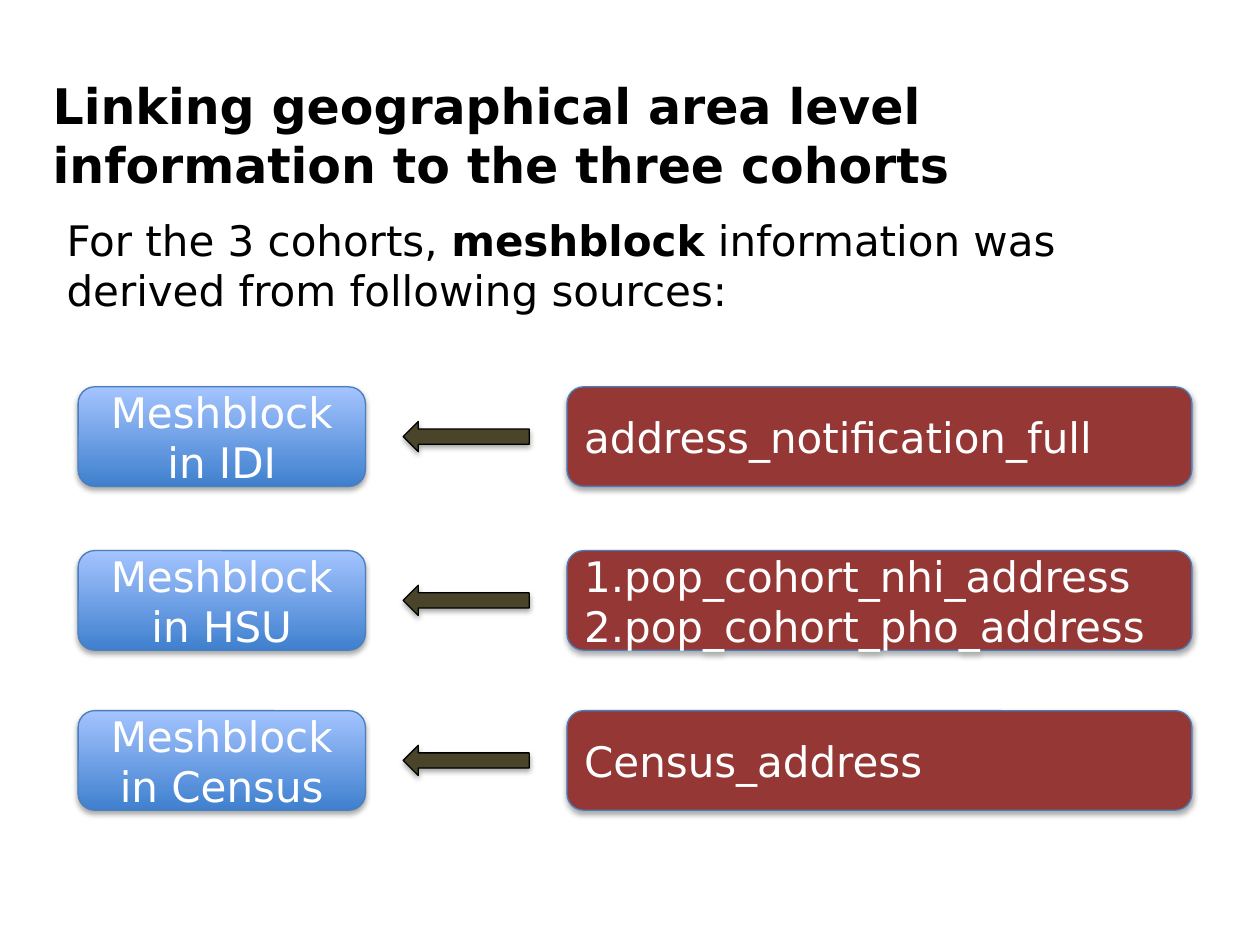
from dataclasses import dataclass

from lxml.etree import SubElement
from pptx import Presentation
from pptx.dml.color import RGBColor
from pptx.enum.shapes import MSO_SHAPE as Shape
from pptx.enum.text import MSO_ANCHOR as Anchor, PP_ALIGN as Align
from pptx.oxml.ns import qn
from pptx.util import Inches, Pt


@dataclass(frozen=True)
class Theme:
    font: str = "DejaVu Sans"
    title_size: int = 28
    body_size: int = 24
    line_width: float = 0.75
    black: str = "000000"
    white: str = "FFFFFF"
    blue_dark: str = "3F80CE"
    blue_light: str = "A4C4FF"
    outline: str = "4B7EBC"
    red: str = "953735"
    olive: str = "4A452A"


THEME = Theme()
INTRO_BOX = (0.32, 0.51, 9.3, 2.1)
TITLE = "Linking geographical area level information to the three cohorts"
INTRO = [
    ("For the 3 cohorts, ", False),
    ("meshblock", True),
    (" information was derived from following sources:", False),
]
ROW_LEFT, ROW_WIDTH, ROW_HEIGHT = 0.62, 8.84, 0.79
ROWS = [
    (3.07, "Meshblock in IDI", ["address_notification_full"]),
    (4.37, "Meshblock in HSU", ["1.pop_cohort_nhi_address", "2.pop_cohort_pho_address"]),
    (5.64, "Meshblock in Census", ["Census_address"]),
]


def set_values(target, **values):
    for name, value in values.items():
        setattr(target, name, value)


def add_span(para, text, size, color, bold=False):
    span = para.add_run()
    span.text = text
    set_values(span.font, name=THEME.font, size=Pt(size), bold=bold)
    span.font.color.rgb = RGBColor.from_string(color)


def add_shadow(shape):
    """Give the shape a soft shadow that falls straight down."""
    shape.shadow.inherit = False
    effects = shape._element.spPr.find(qn("a:effectLst"))
    shadow = SubElement(effects, qn("a:outerShdw"), blurRad="40000", dist="23000",
                        dir="5400000", rotWithShape="0")
    color = SubElement(shadow, qn("a:srgbClr"), val=THEME.black)
    SubElement(color, qn("a:alpha"), val="35000")


def add_block(page, kind, box, fill, outline):
    """Add a shadowed shape; two fill colours run from bottom to top."""
    block = page.shapes.add_shape(kind, *map(Inches, box))
    if len(fill) == 1:
        block.fill.solid()
        block.fill.fore_color.rgb = RGBColor.from_string(fill[0])
    else:
        block.fill.gradient()
        block.fill.gradient_angle = 90
        for stop, color in zip(block.fill.gradient_stops, fill):
            stop.color.rgb = RGBColor.from_string(color)
    block.line.color.rgb = RGBColor.from_string(outline)
    block.line.width = Pt(THEME.line_width)
    add_shadow(block)
    return block


def add_label(page, box, lines, fill, align):
    label = add_block(page, Shape.ROUNDED_RECTANGLE, box, fill, THEME.outline)
    frame = label.text_frame
    set_values(frame, word_wrap=True, vertical_anchor=Anchor.MIDDLE)
    for index, line in enumerate(lines):
        para = frame.add_paragraph() if index else frame.paragraphs[0]
        para.alignment = align
        add_span(para, line, THEME.body_size, THEME.white)


def add_intro(page, box):
    frame = page.shapes.add_textbox(*map(Inches, box)).text_frame
    set_values(frame, word_wrap=True, margin_top=Inches(0.09))
    title = frame.paragraphs[0]
    title.space_after = Pt(6)
    add_span(title, TITLE, THEME.title_size, THEME.black, bold=True)
    body = frame.add_paragraph()
    set_values(body, space_before=Pt(6), space_after=Pt(6))
    body._p.get_or_add_pPr().set("marL", str(Inches(0.11)))
    for text, bold in INTRO:
        add_span(body, text, THEME.body_size, THEME.black, bold)


def add_source_row(page, box, cohort, sources):
    """Place a cohort, its sources and the arrow that leads back to the cohort."""
    left, top, width, height = box
    cohort_width, source_width = 2.28, 4.96
    arrow_width, arrow_height = 1, 0.24
    add_label(page, (left, top, cohort_width, height), [cohort],
              (THEME.blue_dark, THEME.blue_light), Align.CENTER)
    add_label(page, (left + width - source_width, top, source_width, height), sources,
              (THEME.red,), Align.LEFT)
    arrow_box = (left + cohort_width + 0.3, top + (height - arrow_height) / 2,
                 arrow_width, arrow_height)
    arrow = add_block(page, Shape.RIGHT_ARROW, arrow_box, (THEME.olive,), THEME.black)
    arrow.rotation = 180


def main():
    deck = Presentation()
    set_values(deck, slide_width=Inches(10), slide_height=Inches(7.5))
    page = deck.slides.add_slide(deck.slide_layouts[6])
    add_intro(page, INTRO_BOX)
    for top, cohort, sources in ROWS:
        add_source_row(page, (ROW_LEFT, top, ROW_WIDTH, ROW_HEIGHT), cohort, sources)
    deck.save("out.pptx")


if __name__ == "__main__":
    main()
